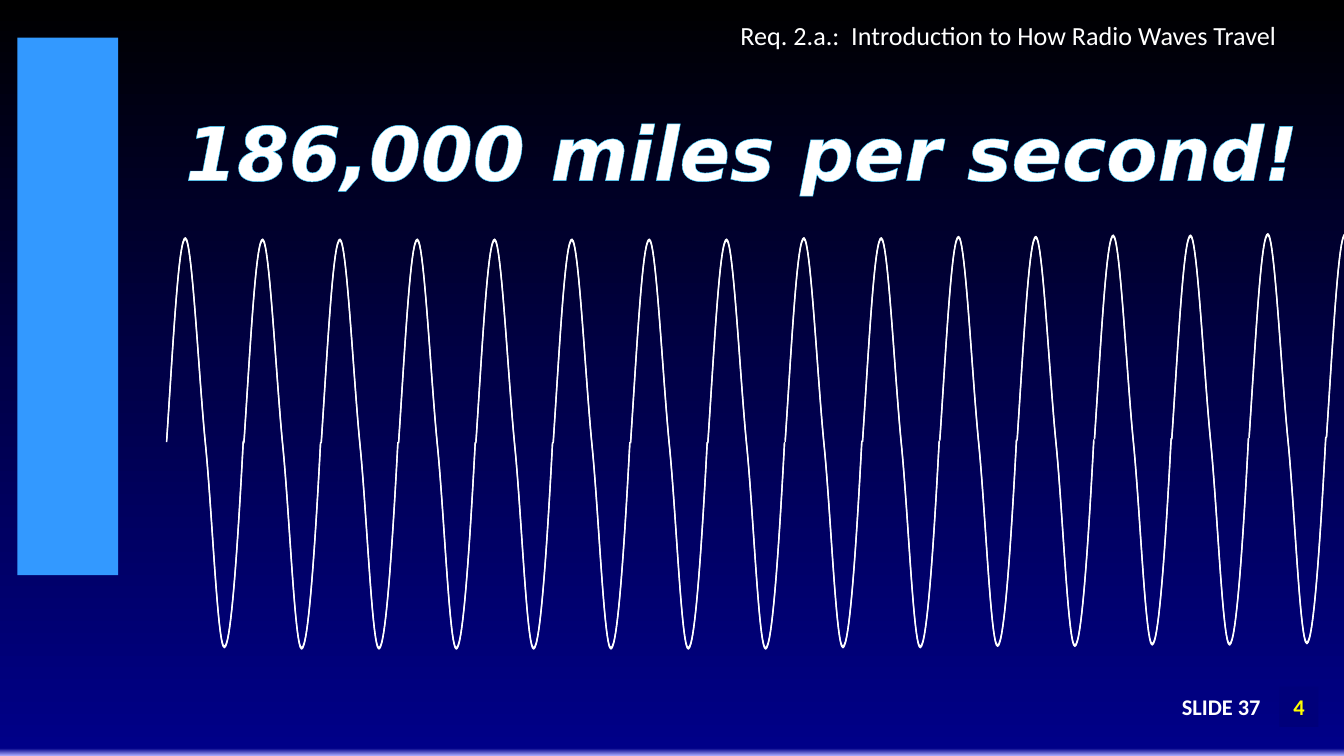
import pptx
import pptx.util
import pptx.dml.color
import pptx.enum.shapes
import pptx.enum.text
import pptx.oxml.ns
from lxml import etree

Inches, Pt = pptx.util.Inches, pptx.util.Pt
RGB = pptx.dml.color.RGBColor.from_string
RECTANGLE = pptx.enum.shapes.MSO_SHAPE.RECTANGLE
ALIGN = pptx.enum.text.PP_ALIGN
qn = pptx.oxml.ns.qn

THEME = {
    "backdrop": [(0, "ABABFF"), (1, "000088"), (50, "000048"), (100, "000000")],
    "text": "FFFFFF", "number": "FFFF00", "number_fill": "00007A",
    "emblem": "3399FF", "glow": "33CCFF", "wave": "FFFFFF",
    "body_font": "Calibri", "headline_font": "DejaVu Sans",
    "title_size": 14, "footer_size": 12, "headline_size": 40,
    "wave_width": 0.75, "glow_width": 2.25,
}

# Content
SLIDE_SIZE = (10, 10 * 9 / 16)
TITLE = "Req. 2.a.:  Introduction to How Radio Waves Travel"
HEADLINE = "186,000 miles per second!"
FOOTER = "SLIDE 37"
NUMBER = "4"

# One cycle: Bezier points as offsets from its start on the midline
CYCLE = [
    (0.05, -0.76), (0.09, -1.52), (0.14, -1.51),
    (0.19, -1.5), (0.24, -0.47), (0.29, 0.03),
    (0.34, 0.54), (0.38, 1.54), (0.43, 1.53),
    (0.48, 1.52), (0.53, 0.76), (0.57, 0),
]
WAVE_LEFT, LAST_CYCLE_LEFT = 1.24, 9.87
MIDLINES = [3.29] + [3.3] * 7 + [3.29, 3.29, 3.28, 3.28, 3.27, 3.27, 3.26, 3.26]
TRAIN_SHIFTS = [0, -0.01]


def add_block(shapes, box, fill=None):
    block = shapes.add_shape(RECTANGLE, *map(Inches, box))
    block.shadow.inherit = False
    block.line.fill.background()
    if fill:
        block.fill.solid()
        block.fill.fore_color.rgb = RGB(fill)
    return block


def write(holder, words, size, color, font, align=None, bold=False, italic=False,
          inset=(0.08, 0.04), middle=True, wrap=True):
    frame = holder.text_frame
    frame.word_wrap = wrap
    frame.margin_left = frame.margin_right = Inches(inset[0])
    frame.margin_top = frame.margin_bottom = Inches(inset[1])
    if middle:
        frame.vertical_anchor = pptx.enum.text.MSO_ANCHOR.MIDDLE
    frame.text = words
    line = frame.paragraphs[0]
    line.alignment = align
    run = line.runs[0]
    run.font.name, run.font.size = font, Pt(size)
    run.font.bold, run.font.italic = bold, italic
    run.font.color.rgb = RGB(color)
    return run


def paint_backdrop(backdrop):
    backdrop.fill.gradient()
    backdrop.fill.gradient_angle = 90
    stops = backdrop._element.spPr.find(".//" + qn("a:gsLst"))
    for old in list(stops):
        stops.remove(old)
    for percent, color in THEME["backdrop"]:
        stop = etree.SubElement(stops, qn("a:gs"), pos=str(percent * 1000))
        etree.SubElement(stop, qn("a:srgbClr"), val=color)


def outline_letters(run):
    outline = etree.Element(qn("a:ln"), w=str(Pt(THEME["glow_width"])))
    fill = etree.SubElement(outline, qn("a:solidFill"))
    etree.SubElement(fill, qn("a:srgbClr"), val=THEME["glow"])
    run._r.get_or_add_rPr().insert(0, outline)


def add_cycle(shapes, left, midline):
    points = [(Inches(left + dx), Inches(midline + dy)) for dx, dy in CYCLE]
    builder = shapes.build_freeform(Inches(left), Inches(midline))
    builder.add_line_segments(points, close=False)
    cycle = builder.convert_to_shape()
    cycle.shadow.inherit = False
    cycle.fill.background()
    cycle.line.color.rgb = RGB(THEME["wave"])
    cycle.line.width = Pt(THEME["wave_width"])
    # Every three straight steps become one Bezier curve
    outline = cycle._element.spPr.find(".//" + qn("a:path"))
    steps = outline.findall(qn("a:lnTo"))
    for first in range(0, len(steps), 3):
        curve = etree.SubElement(outline, qn("a:cubicBezTo"))
        for step in steps[first:first + 3]:
            curve.append(step[0])
            outline.remove(step)


def main():
    deck = pptx.Presentation()
    deck.slide_width, deck.slide_height = map(Inches, SLIDE_SIZE)
    shapes = deck.slides.add_slide(deck.slide_layouts[6]).shapes
    body = THEME["body_font"]

    # Backdrop and plain emblem strip
    paint_backdrop(add_block(shapes, (0, 0, *SLIDE_SIZE)))
    add_block(shapes, (0.13, 0.28, 0.75, 4), THEME["emblem"])

    # Title
    title = shapes.add_textbox(*map(Inches, (4.06, 0.14, 5.44, 0.24)))
    write(title, TITLE, THEME["title_size"], THEME["text"], body, ALIGN.RIGHT, inset=(0, 0))

    # Footer and slide number
    footer = shapes.add_textbox(*map(Inches, (7.38, 5.07, 2.08, 0.37)))
    write(footer, FOOTER, THEME["footer_size"], THEME["text"], body, ALIGN.RIGHT, bold=True)
    number = add_block(shapes, (9.52, 5.11, 0.29, 0.3), THEME["number_fill"])
    write(number, NUMBER, THEME["footer_size"], THEME["number"], body, ALIGN.CENTER, bold=True)

    # Two nearly overlapping wave trains
    pitch = (LAST_CYCLE_LEFT - WAVE_LEFT) / (len(MIDLINES) - 1)
    for shift in TRAIN_SHIFTS:
        train = shapes.add_group_shape()
        for index, midline in enumerate(MIDLINES):
            add_cycle(train.shapes, WAVE_LEFT + index * pitch, midline + shift)

    # Headline
    headline = shapes.add_textbox(*map(Inches, (1.28, 0.74, 8.54, 0.77)))
    outline_letters(write(headline, HEADLINE, THEME["headline_size"], THEME["text"],
                          THEME["headline_font"], bold=True, italic=True,
                          inset=(0.1, 0.05), middle=False, wrap=False))

    deck.save("out.pptx")


if __name__ == "__main__":
    main()
